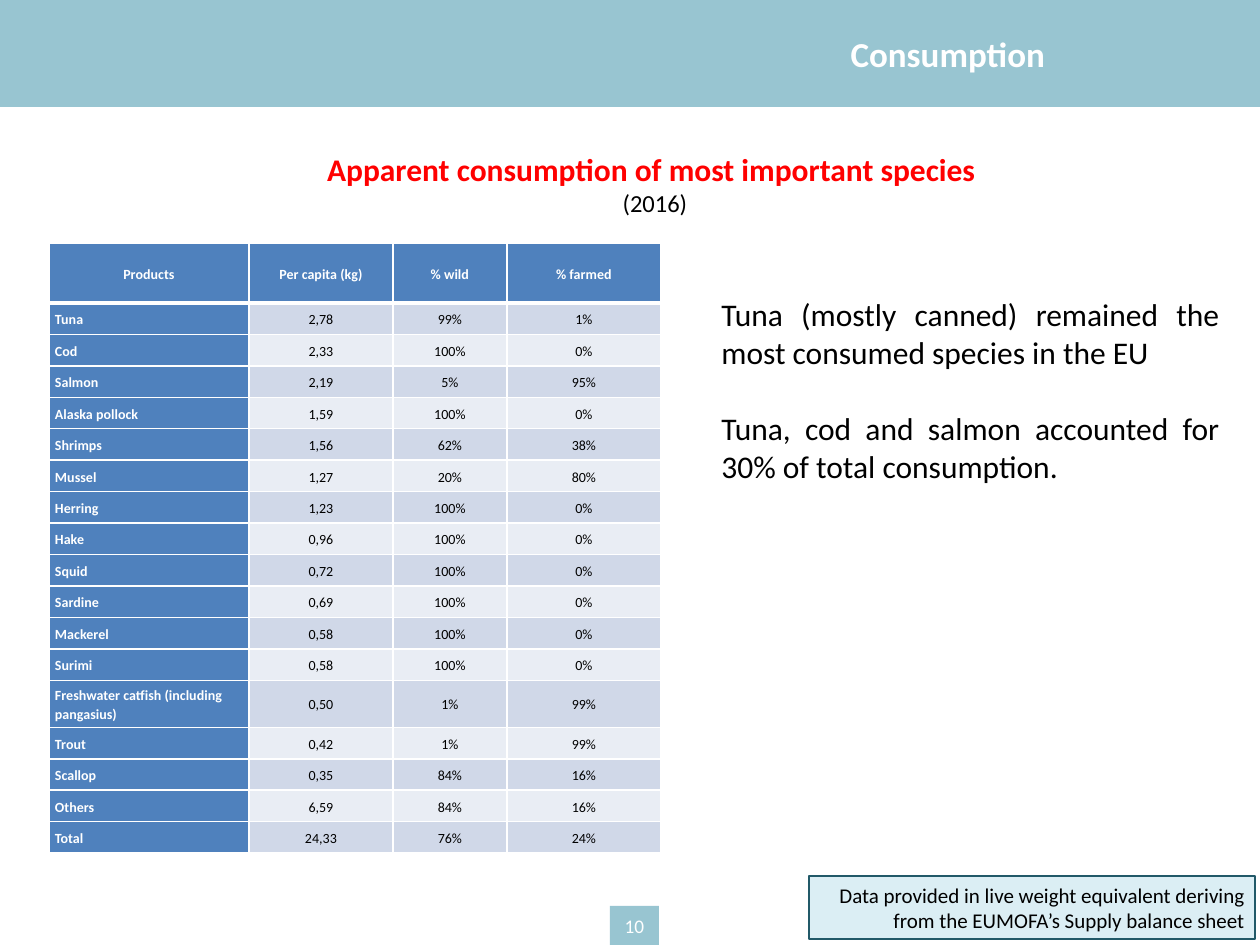
from lxml import etree
from pptx import Presentation
from pptx.dml.color import RGBColor
from pptx.enum.shapes import MSO_SHAPE
from pptx.enum.text import MSO_ANCHOR, PP_ALIGN
from pptx.oxml.ns import qn
from pptx.util import Pt

PX = 914400 // 126
WHITE, BLACK, RED = "FFFFFF", "000000", "FF0000"
TEAL, BLUE, PALE, NAVY = "98C5D1", "4F81BD", "DBEEF4", "215968"
BANDS = ("D0D8E8", "E9EDF4")
LEFT, CENTER, RIGHT, JUSTIFY = PP_ALIGN.LEFT, PP_ALIGN.CENTER, PP_ALIGN.RIGHT, PP_ALIGN.JUSTIFY

TITLE = "Consumption"
HEADING = "Apparent consumption of most important species "
YEAR = "(2016)"
FINDINGS = (
    "Tuna (mostly canned) remained the most consumed species in the EU",
    "Tuna, cod and salmon accounted for 30% of total consumption.",
)
NOTE = "Data provided in live weight equivalent deriving from the EUMOFA’s Supply balance sheet"
PAGE = "10"

CATFISH = "Freshwater catfish (including pangasius)"
TABLE = [
    ("Products", "Per capita (kg)", "% wild", "% farmed"),
    ("Tuna", "2,78", "99%", "1%"),
    ("Cod", "2,33", "100%", "0%"),
    ("Salmon", "2,19", "5%", "95%"),
    ("Alaska pollock", "1,59", "100%", "0%"),
    ("Shrimps", "1,56", "62%", "38%"),
    ("Mussel", "1,27", "20%", "80%"),
    ("Herring", "1,23", "100%", "0%"),
    ("Hake", "0,96", "100%", "0%"),
    ("Squid", "0,72", "100%", "0%"),
    ("Sardine", "0,69", "100%", "0%"),
    ("Mackerel", "0,58", "100%", "0%"),
    ("Surimi", "0,58", "100%", "0%"),
    (CATFISH, "0,50", "1%", "99%"),
    ("Trout", "0,42", "1%", "99%"),
    ("Scallop", "0,35", "84%", "16%"),
    ("Others", "6,59", "84%", "16%"),
    ("Total", "24,33", "76%", "24%"),
]
COL_WIDTHS = (200, 144, 114, 154)
TABLE_LEFT, TABLE_TOP, TABLE_HEIGHT = 49, 243, 611
HEADER_HEIGHT, CATFISH_HEIGHT = 60, 47


def rgb(color):
    return RGBColor.from_string(color)


def place(shape, box):
    for name, value in zip(("left", "top", "width", "height"), box):
        setattr(shape, name, value * PX)


def write(p, text, size, color, align=LEFT, bold=False, **spacing):
    r = p.add_run()
    r.text = text
    for name, value in dict(name="Calibri", size=Pt(size), bold=bold).items():
        setattr(r.font, name, value)
    r.font.color.rgb = rgb(color)
    for name, value in dict(alignment=align, **spacing).items():
        setattr(p, name, value)


def add_rect(s, box, fill, line=None):
    sp = s.shapes.add_shape(MSO_SHAPE.RECTANGLE, *(v * PX for v in box))
    sp.shadow.inherit = False
    sp.fill.solid()
    sp.fill.fore_color.rgb = rgb(fill)
    if line:
        sp.line.color.rgb = rgb(line)
        sp.line.width = Pt(0.75)
    else:
        sp.line.fill.background()
    return sp


def add_text(s, box):
    tf = s.shapes.add_textbox(*(v * PX for v in box)).text_frame
    tf.word_wrap = True
    return tf


def set_borders(cell, **widths):
    """Draw white borders; widths are points by side (L, R, T, B)."""
    tc_pr = cell._tc.get_or_add_tcPr()
    for i, side in enumerate("LRTB"):
        ln = etree.Element(qn(f"a:ln{side}"), w=str(Pt(widths.get(side, 1))))
        fill = etree.SubElement(ln, qn("a:solidFill"))
        etree.SubElement(fill, qn("a:srgbClr"), val=WHITE)
        tc_pr.insert(i, ln)


def fill_cell(cell, text, row, col):
    is_label = row == 0 or col == 0
    cell.fill.solid()
    cell.fill.fore_color.rgb = rgb(BLUE if is_label else BANDS[(row - 1) % 2])
    set_borders(cell, **{0: {"B": 3}, 1: {"T": 3}}.get(row, {}))
    margins = dict(margin_left=6 * PX, margin_right=6 * PX, margin_top=0, margin_bottom=0)
    for name, value in dict(margins, vertical_anchor=MSO_ANCHOR.MIDDLE).items():
        setattr(cell, name, value)
    write(cell.text_frame.paragraphs[0], text, 8, WHITE if is_label else BLACK,
          LEFT if row and col == 0 else CENTER, is_label, line_spacing=1.15)


def add_species_table(s):
    box = (TABLE_LEFT, TABLE_TOP, sum(COL_WIDTHS), TABLE_HEIGHT)
    table = s.shapes.add_table(len(TABLE), len(COL_WIDTHS), *(v * PX for v in box)).table
    for column, width in zip(table.columns, COL_WIDTHS):
        column.width = width * PX
    plain = (TABLE_HEIGHT - HEADER_HEIGHT - CATFISH_HEIGHT) / (len(TABLE) - 2)
    heights = {"Products": HEADER_HEIGHT, CATFISH: CATFISH_HEIGHT}
    for i, values in enumerate(TABLE):
        table.rows[i].height = int(heights.get(values[0], plain) * PX)
        for j, text in enumerate(values):
            fill_cell(table.cell(i, j), text, i, j)


def main():
    prs = Presentation()
    prs.slide_width, prs.slide_height = 1260 * PX, 945 * PX
    s = prs.slides.add_slide(prs.slide_layouts[5])

    add_rect(s, (610, 906, 49, 39), TEAL)
    add_rect(s, (0, 0, 1260, 107), TEAL)
    write(add_text(s, (610, 908, 49, 37)).paragraphs[0], PAGE, 11, WHITE, CENTER)

    title = s.shapes.title
    s.shapes._spTree.append(title._element)  # bring in front of the header band
    place(title, (838, 26, 222, 56))
    tf = title.text_frame
    tf.word_wrap = False
    tf.vertical_anchor = MSO_ANCHOR.TOP
    write(tf.paragraphs[0], TITLE, 20, WHITE, bold=True)

    tf = add_text(s, (273, 144, 764, 80))
    write(tf.paragraphs[0], HEADING, 18, RED, CENTER, True)
    write(tf.add_paragraph(), YEAR, 14, BLACK, CENTER)

    tf = add_text(s, (709, 289, 523, 242))
    for i, text in enumerate(FINDINGS):
        p = tf.add_paragraph() if i else tf.paragraphs[0]
        write(p, text, 18, BLACK, JUSTIFY, space_before=Pt(22 if i else 0))

    tf = add_rect(s, (809, 876, 446, 63), PALE, NAVY).text_frame
    tf.word_wrap = True
    tf.vertical_anchor = MSO_ANCHOR.MIDDLE
    tf.margin_right = 10 * PX
    write(tf.paragraphs[0], NOTE, 12, BLACK, RIGHT)

    add_species_table(s)
    prs.save("out.pptx")


if __name__ == "__main__":
    main()
